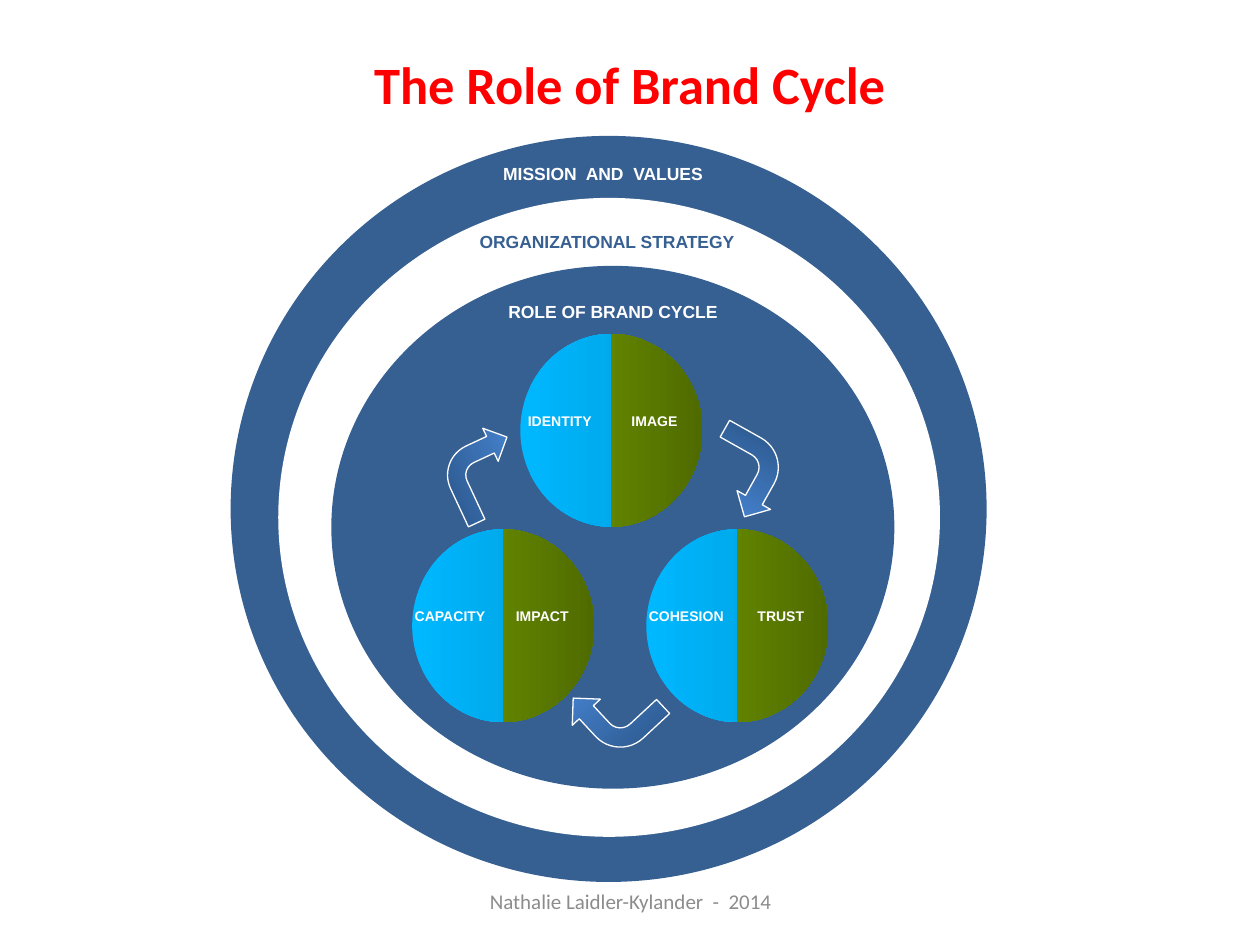
from typing import NamedTuple

from pptx import Presentation
from pptx.dml.color import RGBColor
from pptx.enum.shapes import MSO_SHAPE as Preset
from pptx.enum.text import MSO_ANCHOR as Anchor, PP_ALIGN as Align
from pptx.util import Cm, Pt

NAVY = RGBColor(0x37, 0x60, 0x92)
WHITE = RGBColor(0xFF, 0xFF, 0xFF)
RED = RGBColor(0xFF, 0x00, 0x00)
GREY = RGBColor(0x8C, 0x8C, 0x8C)
SKY_LIGHT = RGBColor(0x00, 0xB8, 0xFF)
SKY_DEEP = RGBColor(0x00, 0x9A, 0xD9)
OLIVE_LIGHT = RGBColor(0x74, 0x9C, 0x00)
OLIVE_DEEP = RGBColor(0x4F, 0x6B, 0x00)
ARROW_DEEP = RGBColor(0x28, 0x50, 0x81)
ARROW_LIGHT = RGBColor(0x4B, 0x8D, 0xDE)

DISC_WIDTH, DISC_HEIGHT = 3.67, 3.89
QUARTER_TURN, THREE_QUARTER_TURN = 54, 162


class Area(NamedTuple):
    left: float
    top: float
    width: float
    height: float


class Ring(NamedTuple):
    area: Area
    fill: RGBColor
    label: str
    label_area: Area
    label_color: RGBColor


class Disc(NamedTuple):
    left: float
    top: float
    left_label: str
    right_label: str
    left_shift: float
    right_shift: float


class Arrow(NamedTuple):
    area: Area
    rotation: float


RINGS = [
    Ring(Area(4.65, 2.74, 15.24, 15.04), NAVY, "MISSION  AND  VALUES",
         Area(9.07, 3.2, 6.17, 0.74), WHITE),
    Ring(Area(5.61, 3.99, 13.34, 12.88), WHITE, "ORGANIZATIONAL STRATEGY",
         Area(8.26, 4.57, 7.95, 0.74), NAVY),
    Ring(Area(6.68, 5.36, 11.35, 10.54), NAVY, "ROLE OF BRAND CYCLE",
         Area(9.27, 5.99, 6.17, 0.74), WHITE),
]
DISCS = [
    Disc(10.49, 6.73, "IDENTITY", "IMAGE", -0.03, 2.06),
    Disc(13.03, 10.67, "COHESION", "TRUST", -0.13, 2.06),
    Disc(8.31, 10.67, "CAPACITY", "IMPACT", -0.13, 1.91),
]
ARROWS = [
    Arrow(Area(9.02, 8.71, 1.47, 1.68), 335),
    Arrow(Area(14.25, 8.74, 1.55, 1.6), 119.3),
    Arrow(Area(11.61, 13.56, 1.55, 1.6), 227.1),
]


def add_text(page, area: Area, text: str, *, size: float, color: RGBColor,
             font: str = "Arial", bold: bool = True, align=Align.CENTER,
             anchor=Anchor.TOP, inset: tuple = (0.18, 0.08), after: float = 10):
    """Place one formatted line of text."""
    box = page.shapes.add_textbox(*map(Cm, area))
    frame = box.text_frame
    frame.word_wrap = True
    frame.vertical_anchor = anchor
    frame.margin_left = frame.margin_right = Cm(inset[0])
    frame.margin_top = frame.margin_bottom = Cm(inset[1])
    para = frame.paragraphs[0]
    para.alignment = align
    para.space_after = Pt(after)
    span = para.add_run()
    span.text = text
    span.font.name = font
    span.font.size = Pt(size)
    span.font.bold = bold
    span.font.color.rgb = color


def add_preset(page, preset, area: Area, *colors: RGBColor):
    """Place an unlined shape with a solid or left-to-right gradient fill."""
    shape = page.shapes.add_shape(preset, *map(Cm, area))
    shape.shadow.inherit = False
    shape.line.fill.background()
    if len(colors) == 1:
        shape.fill.solid()
        shape.fill.fore_color.rgb = colors[0]
    else:
        shape.fill.gradient()
        shape.fill.gradient_angle = 0
        for stop, color, position in zip(shape.fill.gradient_stops, colors, (0, 1)):
            stop.color.rgb = color
            stop.position = position
    return shape


def add_ring(page, ring: Ring) -> None:
    """Draw one ellipse of the nest with its heading."""
    add_preset(page, Preset.OVAL, ring.area, ring.fill)
    add_text(page, ring.label_area, ring.label, size=10, color=ring.label_color)


def add_disc(page, disc: Disc) -> None:
    """Draw a two-tone disc and the label of each half."""
    area = Area(disc.left, disc.top, DISC_WIDTH, DISC_HEIGHT)
    halves = [
        (QUARTER_TURN, THREE_QUARTER_TURN, SKY_LIGHT, SKY_DEEP),
        (THREE_QUARTER_TURN, QUARTER_TURN, OLIVE_LIGHT, OLIVE_DEEP),
    ]
    for start, end, first, last in halves:
        half = add_preset(page, Preset.CHORD, area, first, last)
        half.adjustments[0] = start
        half.adjustments[1] = end
    labels = [(disc.left_label, disc.left_shift, 2.39),
              (disc.right_label, disc.right_shift, 2.03)]
    for text, shift, width in labels:
        label_area = Area(disc.left + shift, disc.top + 1.5, width, 0.64)
        add_text(page, label_area, text, size=8, color=WHITE, align=Align.LEFT)


def add_arrow(page, arrow: Arrow) -> None:
    """Draw a turned, white-edged bent arrow."""
    shape = add_preset(page, Preset.BENT_ARROW, arrow.area, ARROW_DEEP, ARROW_LIGHT)
    shape.rotation = arrow.rotation
    shape.line.color.rgb = WHITE
    shape.line.width = Pt(0.75)


def main() -> None:
    """Build and save the deck."""
    deck = Presentation()
    deck.slide_width, deck.slide_height = Cm(25.4), Cm(19.05)
    page = deck.slides.add_slide(deck.slide_layouts[6])
    plain = dict(font="Calibri", anchor=Anchor.MIDDLE, inset=(0.25, 0.13), after=0)
    add_text(page, Area(1.27, 0, 22.86, 3.38), "The Role of Brand Cycle",
             size=30, color=RED, **plain)
    add_text(page, Area(8.69, 17.65, 8.05, 1.02), "Nathalie Laidler-Kylander  -  2014",
             size=12, color=GREY, bold=False, **plain)
    for ring in RINGS:
        add_ring(page, ring)
    for disc in DISCS:
        add_disc(page, disc)
    for arrow in ARROWS:
        add_arrow(page, arrow)
    deck.save("out.pptx")


if __name__ == "__main__":
    main()
